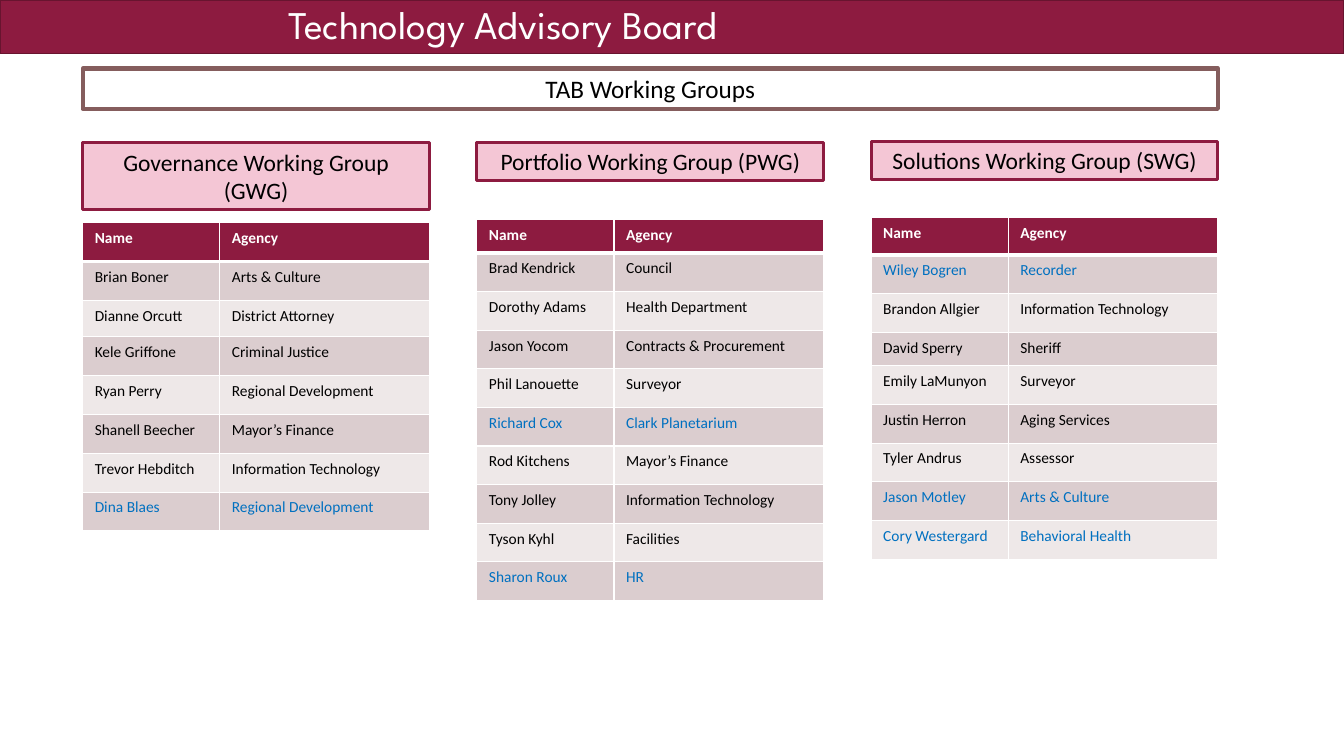
from dataclasses import dataclass, field

from lxml import etree
from pptx import Presentation
from pptx.dml.color import RGBColor
from pptx.enum.shapes import MSO_SHAPE
from pptx.enum.text import MSO_ANCHOR, PP_ALIGN
from pptx.oxml.ns import qn
from pptx.shapes.autoshape import Shape
from pptx.slide import Slide
from pptx.table import _Cell
from pptx.text.text import _Paragraph
from pptx.util import Inches, Pt

RECTANGLE = MSO_SHAPE.RECTANGLE
CENTER = PP_ALIGN.CENTER
MIDDLE = MSO_ANCHOR.MIDDLE

MAROON = RGBColor(0x8D, 0x1B, 0x40)
DARK_MAROON = RGBColor(0x68, 0x14, 0x2F)
PINK = RGBColor(0xF4, 0xC6, 0xD5)
BROWN = RGBColor(0x85, 0x5D, 0x5D)
DARK_BAND = RGBColor(0xDB, 0xCD, 0xCF)
LIGHT_BAND = RGBColor(0xEE, 0xE8, 0xE8)
BLUE = RGBColor(0x00, 0x70, 0xC0)
BLACK = RGBColor(0, 0, 0)
WHITE = RGBColor(0xFF, 0xFF, 0xFF)

BODY_FONT = "Calibri"
TITLE_FONT = "League Spartan"

# Three equal columns spread across the width of the banner
BOARD_LEFT, BOARD_WIDTH = 0.82, 11.26
GROUP_WIDTH, NAME_WIDTH = 3.44, 1.36
GROUP_STEP = (BOARD_WIDTH - GROUP_WIDTH) / 2


@dataclass
class Member:
    name: str
    agency: str
    color: RGBColor = BLACK


@dataclass
class WorkingGroup:
    title: str
    title_top: float
    title_height: float
    table_top: float
    table_height: float
    members: list[Member]
    odd_heights: dict[int, float] = field(default_factory=dict)

    def row_heights(self) -> list[float]:
        """Share the height left by the odd rows equally among the others."""
        count = len(self.members) + 1
        spare = self.table_height - sum(self.odd_heights.values())
        regular = spare / (count - len(self.odd_heights))
        return [self.odd_heights.get(row, regular) for row in range(count)]


GROUPS = [
    WorkingGroup("Governance Working Group (GWG)", 1.41, 0.67, 2.21, 3.06, [
        Member("Brian Boner", "Arts & Culture"),
        Member("Dianne Orcutt", "District Attorney"),
        Member("Kele Griffone", "Criminal Justice"),
        Member("Ryan Perry", "Regional Development"),
        Member("Shanell Beecher", "Mayor’s Finance"),
        Member("Trevor Hebditch", "Information Technology"),
        Member("Dina Blaes", "Regional Development", BLUE),
    ], {2: 0.36}),
    WorkingGroup("Portfolio Working Group (PWG)", 1.41, 0.38, 2.18, 3.78, [
        Member("Brad Kendrick", "Council"),
        Member("Dorothy Adams", "Health Department"),
        Member("Jason Yocom", "Contracts & Procurement"),
        Member("Phil Lanouette", "Surveyor"),
        Member("Richard Cox", "Clark Planetarium", BLUE),
        Member("Rod Kitchens", "Mayor’s Finance"),
        Member("Tony Jolley", "Information Technology"),
        Member("Tyson Kyhl", "Facilities"),
        Member("Sharon Roux", "HR", BLUE),
    ], {0: 0.33}),
    WorkingGroup("Solutions Working Group (SWG)", 1.4, 0.38, 2.16, 3.39, [
        Member("Wiley Bogren", "Recorder", BLUE),
        Member("Brandon Allgier", "Information Technology"),
        Member("David Sperry", "Sheriff"),
        Member("Emily LaMunyon", "Surveyor"),
        Member("Justin Herron", "Aging Services"),
        Member("Tyler Andrus", "Assessor"),
        Member("Jason Motley", "Arts & Culture", BLUE),
        Member("Cory Westergard", "Behavioral Health", BLUE),
    ], {0: 0.37, 3: 0.33}),
]


def add_run(paragraph: _Paragraph, text: str, size: float, color: RGBColor,
            font: str = BODY_FONT, bold: bool = False) -> None:
    run = paragraph.add_run()
    run.text = text
    run.font.name = font
    run.font.size = Pt(size)
    run.font.bold = bold
    run.font.color.rgb = color


def add_box(slide: Slide, left: float, top: float, width: float, height: float,
            line: RGBColor, weight: float, fill: RGBColor | None = None) -> Shape:
    box = slide.shapes.add_shape(RECTANGLE, Inches(left), Inches(top),
                                 Inches(width), Inches(height))
    box.shadow.inherit = False
    if fill is None:
        box.fill.background()
    else:
        box.fill.solid()
        box.fill.fore_color.rgb = fill
    box.line.color.rgb = line
    box.line.width = Pt(weight)
    return box


def add_label(box: Shape, text: str, size: float) -> None:
    frame = box.text_frame
    frame.word_wrap = True
    frame.vertical_anchor = MIDDLE
    frame.paragraphs[0].alignment = CENTER
    add_run(frame.paragraphs[0], text, size, BLACK)


def set_border(cell: _Cell, side: str, weight: float) -> None:
    properties = cell._tc.get_or_add_tcPr()
    line = etree.SubElement(properties, qn(f"a:{side}"), w=str(Pt(weight)))
    fill = etree.SubElement(line, qn("a:solidFill"))
    etree.SubElement(fill, qn("a:srgbClr"), val=str(WHITE))


def fill_cell(cell: _Cell, text: str, color: RGBColor, row: int) -> None:
    header = row == 0
    cell.margin_left = cell.margin_right = Inches(0.12)
    cell.margin_top = cell.margin_bottom = Inches(0.06)
    for side in ("lnL", "lnR"):
        set_border(cell, side, 1)
    set_border(cell, "lnT", 3 if row == 1 else 1)
    set_border(cell, "lnB", 3 if header else 1)
    cell.fill.solid()
    band = DARK_BAND if row % 2 else LIGHT_BAND
    cell.fill.fore_color.rgb = MAROON if header else band
    add_run(cell.text_frame.paragraphs[0], text, 11, color, bold=header)


def add_members(slide: Slide, group: WorkingGroup, left: float) -> None:
    rows = [Member("Name", "Agency", WHITE), *group.members]
    table = slide.shapes.add_table(
        len(rows), 2, Inches(left), Inches(group.table_top),
        Inches(GROUP_WIDTH), Inches(group.table_height)).table
    table.columns[0].width = Inches(NAME_WIDTH)
    table.columns[1].width = Inches(GROUP_WIDTH - NAME_WIDTH)
    for row, (member, height) in enumerate(zip(rows, group.row_heights())):
        table.rows[row].height = Inches(height)
        for column, text in enumerate((member.name, member.agency)):
            fill_cell(table.cell(row, column), text, member.color, row)


def main() -> None:
    deck = Presentation()
    deck.slide_width, deck.slide_height = Inches(13.33), Inches(7.5)
    slide = deck.slides.add_slide(deck.slide_layouts[6])

    # Title band
    add_box(slide, 0, 0, 13.33, 0.53, DARK_MAROON, 1, MAROON)
    title = slide.shapes.add_textbox(Inches(2.76), Inches(-0.05),
                                     Inches(5.38), Inches(0.57))
    title.text_frame.word_wrap = True
    add_run(title.text_frame.paragraphs[0], "Technology Advisory Board",
            28, WHITE, TITLE_FONT)

    # Working groups with their members
    for index, group in enumerate(GROUPS):
        left = BOARD_LEFT + index * GROUP_STEP
        add_members(slide, group, left)
        heading = add_box(slide, left, group.title_top, GROUP_WIDTH,
                          group.title_height, MAROON, 2.25, PINK)
        add_label(heading, group.title, 16.8)

    # Banner above the groups
    banner = add_box(slide, BOARD_LEFT, 0.68, BOARD_WIDTH, 0.4, BROWN, 3)
    add_label(banner, "TAB Working Groups", 18)

    deck.save("out.pptx")


if __name__ == "__main__":
    main()
